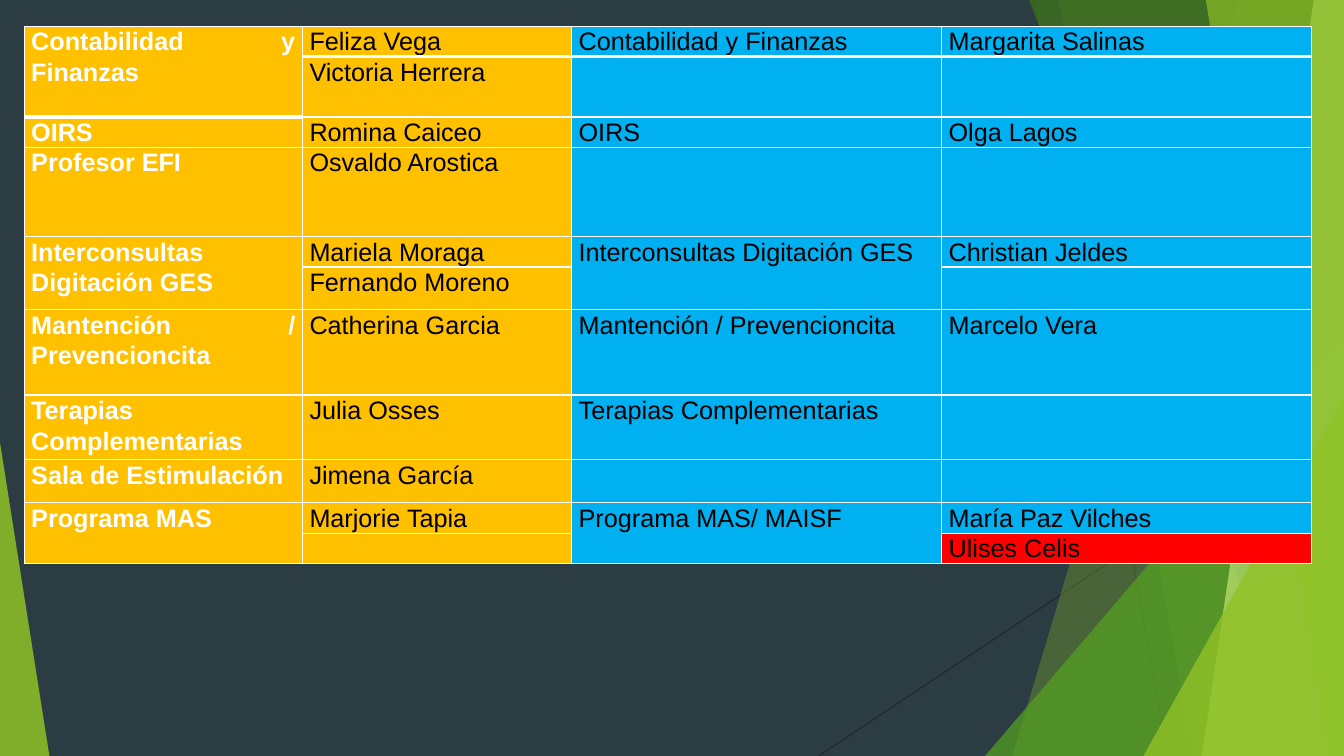
from lxml.etree import SubElement
from pptx import Presentation
from pptx.dml.color import RGBColor
from pptx.enum.shapes import MSO_CONNECTOR, MSO_SHAPE
from pptx.enum.text import PP_ALIGN
from pptx.oxml.ns import qn
from pptx.util import Inches, Pt

BACKGROUND = RGBColor(0x2C, 0x3C, 0x43)
LINE_GRAY = RGBColor(0x26, 0x26, 0x26)
LIME = RGBColor(0x90, 0xC2, 0x26)
GREEN = RGBColor(0x54, 0xA0, 0x21)
DARK_GREEN = RGBColor(0x3F, 0x78, 0x19)
PALE_GREEN = RGBColor(0xC0, 0xE4, 0x74)
WHITE = RGBColor(0xFF, 0xFF, 0xFF)
BLACK = RGBColor(0x00, 0x00, 0x00)
AMBER = RGBColor(0xFF, 0xC0, 0x00)
SKY = RGBColor(0x00, 0xB0, 0xF0)
RED = RGBColor(0xFF, 0x00, 0x00)

WIDTH, HEIGHT = 13.33, 7.5

COLUMN_WIDTHS = [2.76, 2.67, 3.67, 3.67]
STAFF_ROWS = [
    (0.30, "Contabilidad y Finanzas", "Feliza Vega", "Contabilidad y Finanzas", "Margarita Salinas"),
    (0.60, "", "Victoria Herrera", "", ""),
    (0.30, "OIRS", "Romina Caiceo", "OIRS", "Olga Lagos"),
    (0.89, "Profesor EFI", "Osvaldo Arostica", "", ""),
    (0.30, "Interconsultas Digitación GES", "Mariela Moraga", "Interconsultas Digitación GES", "Christian Jeldes"),
    (0.42, "", "Fernando Moreno", "", ""),
    (0.85, "Mantención / Prevencioncita", "Catherina Garcia", "Mantención / Prevencioncita", "Marcelo Vera"),
    (0.64, "Terapias Complementarias", "Julia Osses", "Terapias Complementarias", ""),
    (0.43, "Sala de Estimulación", "Jimena García", "", ""),
    (0.30, "Programa MAS", "Marjorie Tapia", "Programa MAS/ MAISF", "María Paz Vilches"),
    (0.30, "", "", "", "Ulises Celis"),
]
TWO_ROW_CELLS = [(0, 0), (4, 0), (4, 2), (9, 0), (9, 2)]


def paint(shape, color, opacity):
    shape.shadow.inherit = False
    shape.line.fill.background()
    shape.fill.solid()
    shape.fill.fore_color.rgb = color
    color_element = shape.fill._xPr.find(qn("a:solidFill"))[0]
    SubElement(color_element, qn("a:alpha"), val=str(opacity * 1000))


def add_thin_line(slide, start, end):
    connector = slide.shapes.add_connector(
        MSO_CONNECTOR.STRAIGHT, *[Inches(value) for value in start + end])
    connector.line.color.rgb = LINE_GRAY
    connector.line.width = Pt(0.75)
    SubElement(connector._element.spPr, qn("a:effectLst"))


def add_facet(slide, right, height, top_offset, bottom_offset, color, opacity):
    corners = [(right - top_offset, 0), (right, 0), (right, height), (right - bottom_offset, height)]
    points = [(Inches(x), Inches(y)) for x, y in corners]
    builder = slide.shapes.build_freeform(*points[0])
    builder.add_line_segments(points[1:], close=True)
    paint(builder.convert_to_shape(), color, opacity)


def add_triangle(slide, left, bottom, width, height, apex, color, opacity):
    triangle = slide.shapes.add_shape(
        MSO_SHAPE.ISOSCELES_TRIANGLE,
        Inches(left), Inches(bottom - height), Inches(width), Inches(height))
    triangle.adjustments[0] = apex
    paint(triangle, color, opacity)


def add_backdrop(slide, width, height):
    slide.background.fill.solid()
    slide.background.fill.fore_color.rgb = BACKGROUND
    add_thin_line(slide, (width - 3.08, 0), (width - 1.75, height))
    add_thin_line(slide, (width, 4.03), (width - 5.21, height))
    add_facet(slide, width, height, 1.05, 3.29, LIME, 30)
    add_facet(slide, width, height, 2.83, 1.5, LIME, 20)
    add_triangle(slide, width - 3.56, height, 3.56, 4.17, 1, GREEN, 72)
    add_facet(slide, width, height, 3.12, 0.42, DARK_GREEN, 70)
    add_facet(slide, width, height, 0.3, 1.41, PALE_GREEN, 70)
    add_facet(slide, width, height, 1.37, 0.15, LIME, 65)
    add_triangle(slide, width - 1.99, height, 1.99, 3.57, 1, LIME, 80)
    add_triangle(slide, 0, height, 0.49, 3.11, 0, LIME, 85)


def add_borders(cell, bottom_width):
    properties = cell._tc.get_or_add_tcPr()
    sides = [("a:lnL", 1), ("a:lnR", 1), ("a:lnT", 1), ("a:lnB", bottom_width)]
    for position, (side, width) in enumerate(sides):
        border = SubElement(properties, qn(side), w=str(Pt(width)))
        fill = SubElement(border, qn("a:solidFill"))
        SubElement(fill, qn("a:srgbClr"), val=str(WHITE))
        properties.insert(position, border)


def fill_cell(cell, text, color, is_area):
    cell.margin_left = cell.margin_right = Inches(0.07)
    cell.margin_top = cell.margin_bottom = 0
    cell.fill.solid()
    cell.fill.fore_color.rgb = color
    cell.text = text
    paragraph = cell.text_frame.paragraphs[0]
    paragraph.alignment = PP_ALIGN.JUSTIFY
    paragraph.line_spacing = 1.07
    paragraph.font.name = "Arial"
    paragraph.font.size = Pt(18)
    paragraph.font.bold = is_area
    paragraph.font.color.rgb = WHITE if is_area else BLACK


def add_staff_table(slide, left, top):
    width = sum(COLUMN_WIDTHS)
    height = sum(row[0] for row in STAFF_ROWS)
    table = slide.shapes.add_table(
        len(STAFF_ROWS), len(COLUMN_WIDTHS),
        Inches(left), Inches(top), Inches(width), Inches(height)).table
    table.first_row = False
    table.horz_banding = False
    for column, column_width in zip(table.columns, COLUMN_WIDTHS):
        column.width = Inches(column_width)
    for row_index, (row_height, *texts) in enumerate(STAFF_ROWS):
        table.rows[row_index].height = Inches(row_height)
        for column_index, text in enumerate(texts):
            cell = table.cell(row_index, column_index)
            color = AMBER if column_index < 2 else SKY
            if text == "Ulises Celis":
                color = RED
            fill_cell(cell, text, color, column_index == 0)
            add_borders(cell, 3 if row_index == 0 else 1)
    for row_index, column_index in TWO_ROW_CELLS:
        table.cell(row_index, column_index).merge(table.cell(row_index + 1, column_index))


def main():
    presentation = Presentation()
    presentation.slide_width = Inches(WIDTH)
    presentation.slide_height = Inches(HEIGHT)
    slide = presentation.slides.add_slide(presentation.slide_layouts[6])
    add_backdrop(slide, WIDTH, HEIGHT)
    add_staff_table(slide, 0.24, 0.26)
    presentation.save("out.pptx")


if __name__ == "__main__":
    main()
